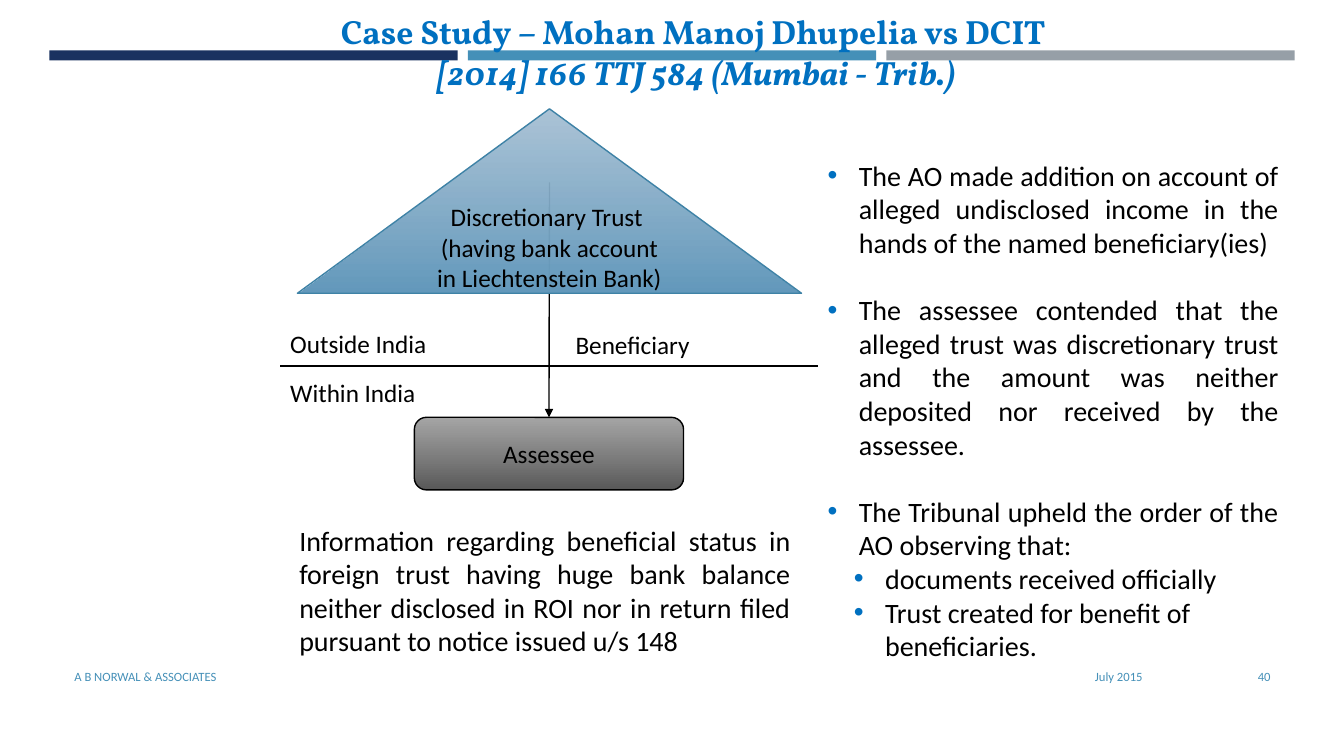
from dataclasses import dataclass

from lxml.etree import SubElement
from pptx import Presentation
from pptx.dml.color import RGBColor
from pptx.enum.shapes import MSO_CONNECTOR, MSO_SHAPE
from pptx.enum.text import MSO_ANCHOR, PP_ALIGN
from pptx.oxml.ns import qn
from pptx.util import Emu, Pt

EMU_PER_PX = 9144  # 100 px to the inch


def px(length):
    return Emu(length * EMU_PER_PX)


def rgb(code):
    return RGBColor.from_string(code)


@dataclass(frozen=True)
class Theme:
    body_font: str = "Calibri"
    title_font: str = "Vollkorn"
    title_size: int = 24
    body_size: int = 20
    label_size: int = 18
    footer_size: int = 9
    ink: str = "000000"
    accent: str = "0070C0"
    footer: str = "4590B8"
    bars: tuple = ("1A3260", "4590B8", "969FA7")
    trust_gradient: tuple = ("A2BDD2", "6399BC")
    trust_line: str = "3E82A6"
    assessee_gradient: tuple = ("9B9B9B", "595959")


class SlideBuilder:
    def __init__(self, slide, theme):
        self.slide = slide
        self.theme = theme

    def style(self, paragraph, size, color=None, name=None, align=PP_ALIGN.LEFT):
        paragraph.alignment = align
        font = paragraph.font
        font.name = name or self.theme.body_font
        font.size = Pt(size)
        font.color.rgb = rgb(color or self.theme.ink)
        return font

    def set_lines(self, frame, lines, size, color=None, align=PP_ALIGN.LEFT):
        frame.word_wrap = True
        frame.text = "\n".join(lines)
        for paragraph in frame.paragraphs:
            self.style(paragraph, size, color, align=align)

    def title(self, box, lines):
        title = self.slide.shapes.title
        self.slide.shapes.element.append(title.element)  # in front of the bars
        title.left, title.top, title.width, title.height = map(px, box)
        frame = title.text_frame
        frame.text = "\n".join(lines)
        frame.word_wrap = False
        frame.vertical_anchor = MSO_ANCHOR.TOP
        for paragraph in frame.paragraphs:
            font = self.style(paragraph, self.theme.title_size, self.theme.accent,
                              self.theme.title_font, PP_ALIGN.CENTER)
            font.bold = True
        font.italic = True  # the citation on the last line

    def shape(self, kind, box):
        shape = self.slide.shapes.add_shape(kind, *map(px, box))
        shape.shadow.inherit = False
        return shape

    def bar(self, box, color):
        bar = self.shape(MSO_SHAPE.RECTANGLE, box)
        bar.fill.solid()
        bar.fill.fore_color.rgb = rgb(color)
        bar.line.fill.background()

    def node(self, kind, box, gradient, line_color, lines):
        node = self.shape(kind, box)
        node.fill.gradient()
        node.fill.gradient_angle = 270
        for stop, color in zip(node.fill.gradient_stops, gradient):
            stop.color.rgb = rgb(color)
        # The top of the gradient is slightly see-through
        top_color = next(node.element.iter(qn("a:srgbClr")))
        SubElement(top_color, qn("a:alpha"), val="90000")
        node.line.color.rgb = rgb(line_color)
        node.line.width = Pt(1)
        node.text_frame.vertical_anchor = MSO_ANCHOR.MIDDLE
        self.set_lines(node.text_frame, lines, self.theme.label_size,
                       align=PP_ALIGN.CENTER)
        return node

    def line(self, start, end, target=None):
        line = self.slide.shapes.add_connector(
            MSO_CONNECTOR.STRAIGHT, *map(px, start + end))
        line.line.color.rgb = rgb(self.theme.ink)
        line.line.width = Pt(1)
        properties = line.element.spPr
        if target is not None:
            line.end_connect(target, 0)
            SubElement(properties.find(qn("a:ln")), qn("a:tailEnd"), type="triangle")
        SubElement(properties, qn("a:effectLst"))

    def text(self, box, lines, size, color=None, align=PP_ALIGN.LEFT,
             anchor=MSO_ANCHOR.TOP):
        frame = self.slide.shapes.add_textbox(*map(px, box)).text_frame
        frame.vertical_anchor = anchor
        self.set_lines(frame, lines, size, color, align)
        return frame

    def bullets(self, box, items):
        """Each item is (level, text, space after in points)."""
        frame = self.text(box, [text for _, text, _ in items], self.theme.body_size)
        for paragraph, (level, _, gap) in zip(frame.paragraphs, items):
            paragraph.level = level
            paragraph.alignment = PP_ALIGN.LEFT if level else PP_ALIGN.JUSTIFY
            paragraph.space_after = Pt(gap)
            properties = paragraph._p.get_or_add_pPr()
            properties.set("marL", str(px(31 + 26 * level)))
            properties.set("indent", str(px(-31)))
            bullet_color = SubElement(properties, qn("a:buClr"))
            SubElement(bullet_color, qn("a:srgbClr"), val=self.theme.accent)
            SubElement(properties, qn("a:buFont"), typeface="Arial")
            SubElement(properties, qn("a:buChar"), char="•")
            properties.append(properties.find(qn("a:defRPr")))  # must come last


def main():
    presentation = Presentation()
    presentation.slide_width, presentation.slide_height = px(1333), px(750)
    theme = Theme()
    slide = presentation.slides.add_slide(presentation.slide_layouts[5])
    builder = SlideBuilder(slide, theme)

    # Bars and title
    for index, color in enumerate(theme.bars):
        builder.bar((49 + 415 * index, 50, 405, 10), color)
    builder.title((318, 6, 739, 91), [
        "Case Study – Mohan Manoj Dhupelia vs DCIT",
        " [2014] 166 TTJ 584 (Mumbai - Trib.)",
    ])

    # Trust diagram: the arrow runs behind the triangle
    assessee = builder.node(MSO_SHAPE.ROUNDED_RECTANGLE, (411, 414, 267, 72),
                            theme.assessee_gradient, theme.ink, ["Assessee"])
    builder.line((545, 181), (545, 414), target=assessee)
    builder.line((278, 363), (811, 363))
    for left, top, label in ((561, 322, "Beneficiary"),
                             (278, 321, "Outside India"),
                             (278, 369, "Within India")):
        builder.text((left, top, 208, 40), [label], theme.label_size)
    builder.node(MSO_SHAPE.ISOSCELES_TRIANGLE, (295, 108, 500, 183),
                 theme.trust_gradient, theme.trust_line,
                 ["Discretionary Trust ", "(having bank account in Liechtenstein Bank)"])

    # Facts and findings
    builder.text((287, 514, 507, 178), [
        "Information regarding beneficial status in foreign trust having huge bank "
        "balance neither disclosed in ROI nor in return filed pursuant to notice "
        "issued u/s 148"], theme.body_size, align=PP_ALIGN.JUSTIFY)
    builder.bullets((811, 152, 467, 515), [
        (0, "The AO made addition on account of alleged undisclosed income in the "
            "hands of the named beneficiary(ies)", 24),
        (0, "The assessee contended that the alleged trust was discretionary trust "
            "and the amount was neither deposited nor received by the assessee. ", 24),
        (0, "The Tribunal upheld the order of the AO observing that:", 0),
        (1, "documents received officially", 0),
        (1, "Trust created for benefit of beneficiaries.", 0),
    ])

    # Footer
    for left, width, text, align in (
            (832, 311, "July 2015", PP_ALIGN.RIGHT),
            (1155, 115, "40", PP_ALIGN.RIGHT),
            (64, 756, "A B NORWAL & ASSOCIATES", PP_ALIGN.LEFT)):
        builder.text((left, 651, width, 40), [text], theme.footer_size,
                     theme.footer, align, MSO_ANCHOR.MIDDLE)

    presentation.save("out.pptx")


if __name__ == "__main__":
    main()
